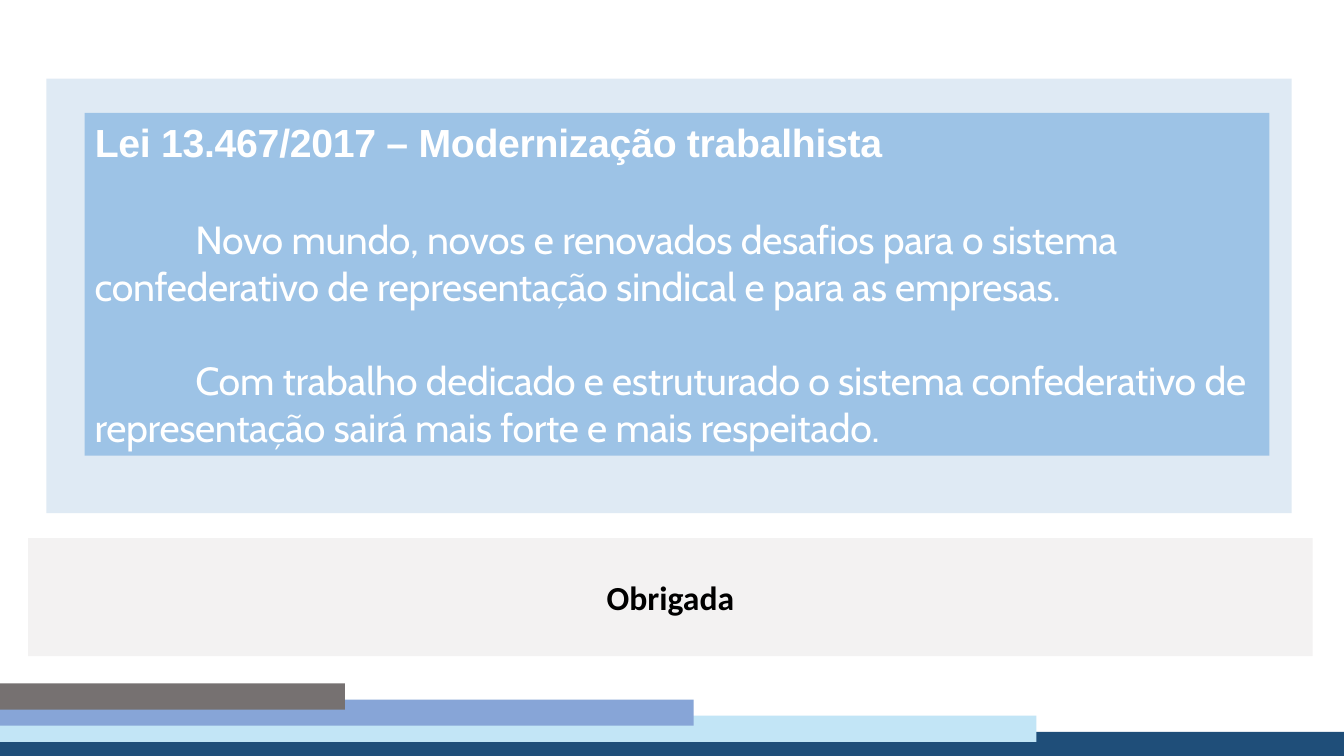
from lxml import etree
from pptx import Presentation
from pptx.dml.color import RGBColor
from pptx.enum.shapes import MSO_SHAPE
from pptx.enum.text import MSO_ANCHOR, MSO_AUTO_SIZE, PP_ALIGN
from pptx.oxml.ns import qn
from pptx.util import Inches, Pt

RECTANGLE = MSO_SHAPE.RECTANGLE
TOP, MIDDLE, BOTTOM = MSO_ANCHOR.TOP, MSO_ANCHOR.MIDDLE, MSO_ANCHOR.BOTTOM
LEFT, CENTER = PP_ALIGN.LEFT, PP_ALIGN.CENTER
NO_AUTOFIT = MSO_AUTO_SIZE.NONE

NAVY = RGBColor(0x1F, 0x4E, 0x79)
PALE_BLUE = RGBColor(0xC2, 0xE5, 0xF6)
PERIWINKLE = RGBColor(0x87, 0xA5, 0xD7)
DARK_GRAY = RGBColor(0x76, 0x71, 0x71)
FRAME_BLUE = RGBColor(0x2E, 0x75, 0xB6)
CLOSING_GRAY = RGBColor(0xAF, 0xAB, 0xAB)
PANEL_BLUE = RGBColor(0x9D, 0xC3, 0xE6)
WHITE = RGBColor(0xFF, 0xFF, 0xFF)
BLACK = RGBColor(0, 0, 0)

HEADING = "Lei 13.467/2017 – Modernização trabalhista"
MESSAGES = [
    "Novo mundo, novos e renovados desafios para o sistema "
    "confederativo de representação sindical e para as empresas.",
    "Com trabalho dedicado e estruturado o sistema confederativo de "
    "representação sairá mais forte e mais respeitado.",
]
CLOSING = "Obrigada"

# Footer steps from bottom to top: width, colour
STEPS = [(13.33, NAVY), (10.28, PALE_BLUE), (6.88, PERIWINKLE), (3.42, DARK_GRAY)]
STEP_TOP, STEP_RISE, STEP_HEIGHT = 7.26, 0.16, 0.26

FRAME = (0.46, 0.78, 12.35, 4.31)
CLOSING_BAND = (0.28, 5.34, 12.74, 1.17)
PANEL = (0.84, 1.12, 11.75, 3.4)
HEADING_HEIGHT = 0.6


def add_block(slide, bounds, color, opacity=100):
    block = slide.shapes.add_shape(RECTANGLE, *map(Inches, bounds))
    block.shadow.inherit = False
    block.fill.solid()
    block.fill.fore_color.rgb = color
    block.line.fill.background()
    if opacity < 100:
        color_node = block.fill._xPr.find(".//" + qn("a:srgbClr"))
        etree.SubElement(color_node, qn("a:alpha"), val=str(opacity * 1000))
    return block


def write(shape, texts, font, size, color, bold=False, align=LEFT, anchor=TOP,
          indent=0, gap=0, tracking=0):
    """Fill a shape with paragraphs; gap and tracking are in points."""
    frame = shape.text_frame
    frame.word_wrap = True
    frame.auto_size = NO_AUTOFIT
    frame.vertical_anchor = anchor
    for index, text in enumerate(texts):
        para = frame.add_paragraph() if index else frame.paragraphs[0]
        para.alignment = align
        para.space_before = Pt(gap if index else 0)
        if indent:
            properties = para._p.get_or_add_pPr()
            properties.set("marL", "0")
            properties.set("indent", str(Inches(indent)))
        span = para.add_run()
        span.text = text
        span.font.name = font
        span.font.size = Pt(size)
        span.font.bold = bold
        span.font.color.rgb = color
        if tracking:
            span.font._element.set("spc", str(round(tracking * 100)))


def main():
    deck = Presentation()
    deck.slide_width, deck.slide_height = Inches(13.33), Inches(7.5)
    slide = deck.slides.add_slide(deck.slide_layouts[5])

    for level, (width, color) in enumerate(STEPS):
        add_block(slide, (0, STEP_TOP - level * STEP_RISE, width, STEP_HEIGHT), color)

    add_block(slide, FRAME, FRAME_BLUE, opacity=15)
    closing = add_block(slide, CLOSING_BAND, CLOSING_GRAY, opacity=15)
    write(closing, [CLOSING], "Calibri", 24, BLACK, bold=True, align=CENTER, anchor=MIDDLE)

    panel = add_block(slide, PANEL, PANEL_BLUE)
    write(panel, MESSAGES, "Cabin", 28, WHITE, anchor=BOTTOM, indent=1, gap=33.5,
          tracking=-0.2)

    title = slide.shapes.title
    left, top, width, _ = PANEL
    title.left, title.top = Inches(left), Inches(top)
    title.width, title.height = Inches(width), Inches(HEADING_HEIGHT)
    write(title, [HEADING], "Arial", 28, WHITE, bold=True, tracking=-0.2)
    panel._element.addnext(title._element)  # heading in front of the panel

    deck.save("out.pptx")


if __name__ == "__main__":
    main()
